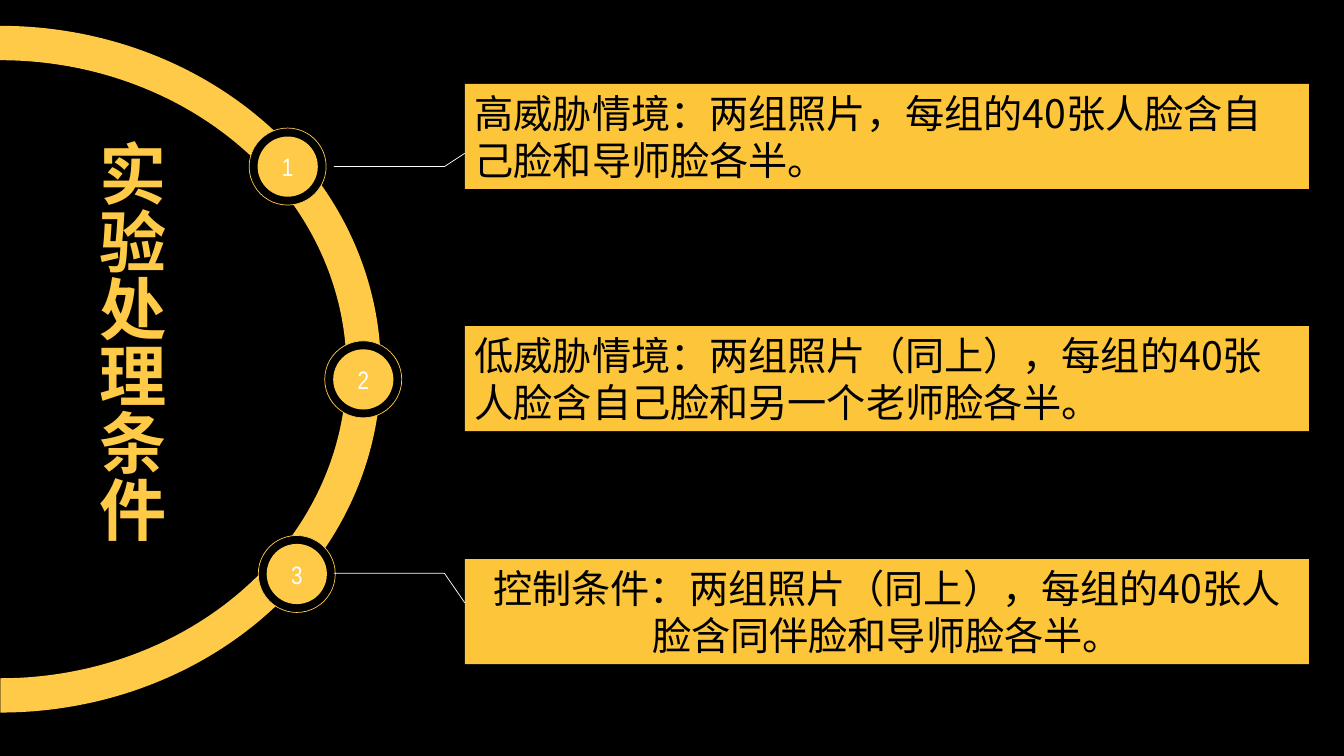
"""Build the slide on the three experimental conditions."""
from lxml.etree import SubElement
from pptx import Presentation
from pptx.dml.color import RGBColor
from pptx.enum.shapes import MSO_SHAPE as SHAPE
from pptx.enum.text import MSO_ANCHOR as ANCHOR, MSO_AUTO_SIZE as AUTO, PP_ALIGN as ALIGN
from pptx.oxml.ns import qn
from pptx.util import Pt

COLORS = {"back": "000000", "ring": "FECA48", "box": "FDC539", "light": "FFFFFF"}
CJK = "Noto Sans CJK SC"
FORMATS = {
    "title": {"name": CJK, "size": Pt(48), "bold": True},
    "box": {"name": CJK, "size": Pt(28)},
    "number": {"name": "Arial Narrow", "size": Pt(18)},
}
BADGE, GAP = 55, 6
BOX_LEFT, BOX_WIDTH, BOX_HEIGHT = 332, 603, 75
CONDITIONS = [
    ((178, 91.5), 60, ALIGN.LEFT, "高威胁情境：两组照片，每组的40张人脸含自己脸和导师脸各半。"),
    ((232, 243.5), 233, ALIGN.LEFT, "低威胁情境：两组照片（同上），每组的40张人脸含自己脸和另一个老师脸各半。"),
    ((184.5, 382.5), 399.5, ALIGN.CENTER, "控制条件：两组照片（同上），每组的40张人脸含同伴脸和导师脸各半。"),
]
LEADERS = [(119, 109.5), (409.5, 430.5)]


def rgb(key):
    return RGBColor.from_string(COLORS[key])


def write(s, text, style, color, align):
    p = s.text_frame.paragraphs[0]
    p.alignment = align
    r = p.add_run()
    r.text = text
    for name, value in FORMATS[style].items():
        setattr(r.font, name, value)
    r.font.color.rgb = rgb(color)
    if r.font.name == CJK:
        SubElement(r._r.get_or_add_rPr(), qn("a:ea"), typeface=CJK)
        p.line_spacing = Pt(r.font.size.pt * 1.2)


def add_filled(slide, kind, left, top, width, height, fill, line=None):
    s = slide.shapes.add_shape(kind, Pt(left), Pt(top), Pt(width), Pt(height))
    s.shadow.inherit = False
    s.fill.solid()
    s.fill.fore_color.rgb = rgb(fill)
    if line:
        s.line.color.rgb = rgb(line)
        s.line.width = Pt(0.5)
    else:
        s.line.fill.background()
    return s


def add_ring(slide):
    s = add_filled(slide, SHAPE.BLOCK_ARC, -245, -8, 490.5, 543.5, "ring")
    for i, value in enumerate((108, 0.596, 0.05)):
        s.adjustments[i] = value
    s.rotation = 270
    s._element.spPr.find(qn("a:xfrm")).set("flipV", "1")


def add_badge(slide, left, top, number):
    add_filled(slide, SHAPE.OVAL, left, top, BADGE, BADGE, "back", "ring")
    disc = BADGE - 2 * GAP
    s = add_filled(slide, SHAPE.OVAL, left + GAP, top + GAP, disc, disc, "ring")
    s.text_frame.vertical_anchor = ANCHOR.MIDDLE
    write(s, str(number), "number", "light", ALIGN.CENTER)


def add_leader(slide, badge_y, box_y):
    builder = slide.shapes.build_freeform(Pt(BOX_LEFT), Pt(box_y))
    builder.add_line_segments([(Pt(317.5), Pt(badge_y)), (Pt(238.5), Pt(badge_y))], close=False)
    s = builder.convert_to_shape()
    s.shadow.inherit = False
    s.fill.background()
    s.line.color.rgb = rgb("light")
    s.line.width = Pt(0.5)


def add_box(slide, top, align, text):
    s = add_filled(slide, SHAPE.RECTANGLE, BOX_LEFT, top, BOX_WIDTH, BOX_HEIGHT, "box")
    tf = s.text_frame
    tf.word_wrap = True
    tf.auto_size = AUTO.SHAPE_TO_FIT_TEXT
    tf.vertical_anchor = ANCHOR.TOP
    write(s, text, "box", "back", align)


def set_title(slide, text):
    s = slide.shapes.title
    s.left, s.top, s.width, s.height = Pt(56), Pt(97), Pt(73), Pt(298)
    tf = s.text_frame
    tf.word_wrap = False
    tf.auto_size = AUTO.SHAPE_TO_FIT_TEXT
    tf.vertical_anchor = ANCHOR.TOP
    tf._txBody.bodyPr.set("vert", "eaVert")
    write(s, text, "title", "ring", ALIGN.CENTER)


def main():
    prs = Presentation()
    prs.slide_width, prs.slide_height = Pt(960), Pt(540)
    slide = prs.slides.add_slide(prs.slide_layouts[5])
    slide.background.fill.solid()
    slide.background.fill.fore_color.rgb = rgb("back")
    add_ring(slide)
    for number, (badge, top, align, text) in enumerate(CONDITIONS, 1):
        add_badge(slide, *badge, number)
        add_box(slide, top, align, text)
    for badge_y, box_y in LEADERS:
        add_leader(slide, badge_y, box_y)
    set_title(slide, "实验处理条件")
    prs.save("out.pptx")


if __name__ == "__main__":
    main()
